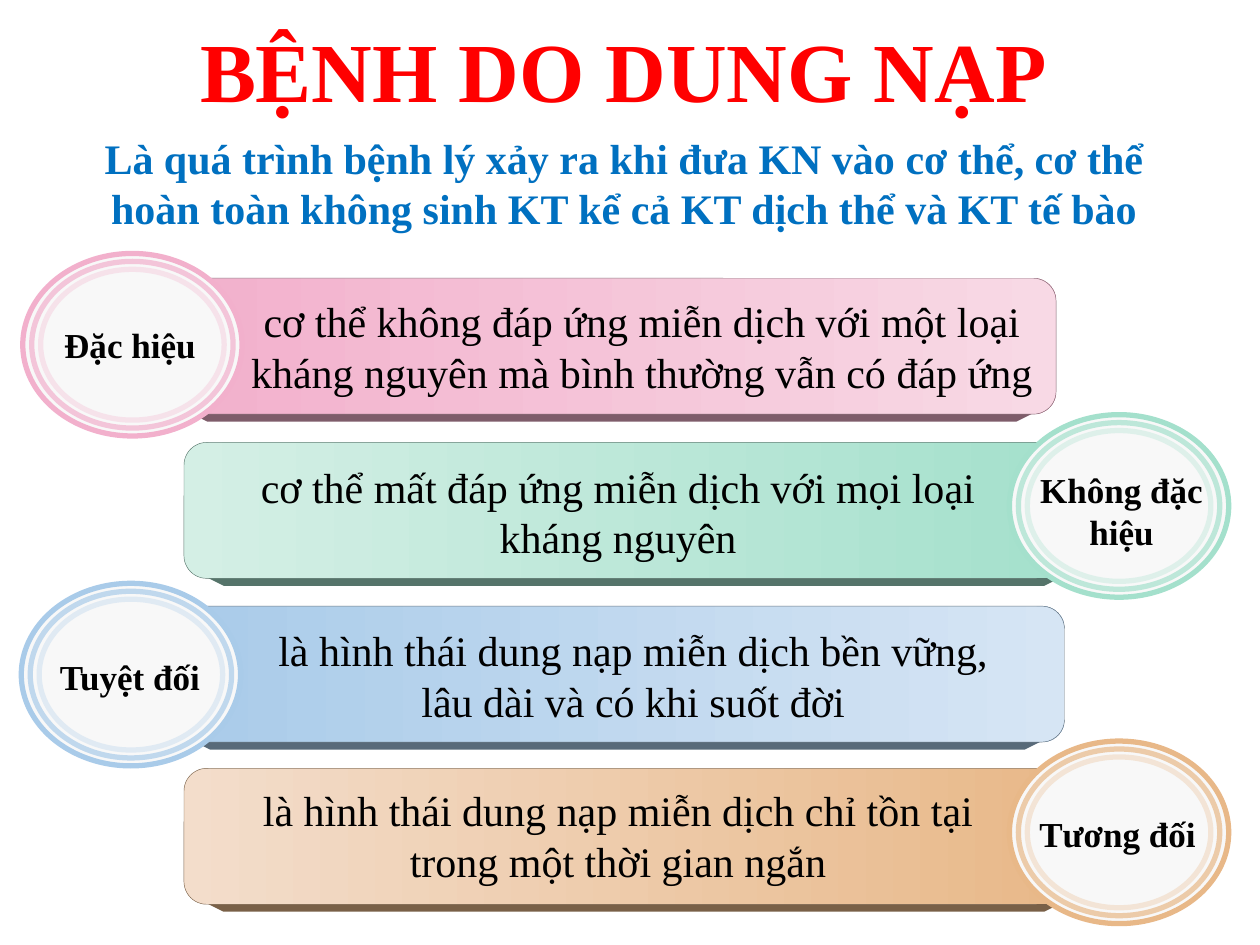
from dataclasses import dataclass

from lxml import etree
from pptx import Presentation
from pptx import util as u
from pptx.dml.color import RGBColor
from pptx.enum import shapes, text
from pptx.oxml.ns import qn

Cm, Pt = u.Cm, u.Pt
FONT = "Times New Roman"
HUES = {
    "red": "FF0000", "navy": "0070C0", "black": "000000", "white": "FFFFFF", "disc": "F8F8F8",
    "pink": "F2B0CC", "pink pale": "F8D9E5", "pink dark": "7E5C6A",
    "green": "A4E0CC", "green pale": "D4EFE5", "green dark": "55746A",
    "blue": "A9CBE9", "blue pale": "D6E5F4", "blue dark": "586A79",
    "tan": "E8B888", "tan pale": "F3DDCB", "tan dark": "796047",
}
BAR_H, DEPTH = 2.74, 0.15
RING_W, RING_H = 4.42, 3.68
STEP_X, STEP_Y = 0.18, 0.16


@dataclass
class Row:
    hue: str
    left: bool  # ring on the left side
    bar: tuple[float, float, float]  # left, top, width
    body: str
    note: tuple[float, float, float]
    ring: tuple[float, float]
    label: str
    tag: tuple[float, float]


ROWS = [
    Row("pink", True, (3.38, 5.61, 17.91),
        "cơ thể không đáp ứng miễn dịch với một loại kháng nguyên mà bình thường vẫn có đáp ứng",
        (4.8, 5.84, 16.28), (0.46, 5.11), "Đặc hiệu", (0.69, 6.4)),
    Row("green", False, (3.71, 8.92, 18.14),
        "cơ thể mất đáp ứng miễn dịch với mọi loại kháng nguyên",
        (4.32, 9.17, 16.28), (20.35, 8.36), "Không đặc hiệu", (20.68, 9.32)),
    Row("blue", True, (3.43, 12.22, 18.03),
        "là hình thái dung nạp miễn dịch bền vững, lâu dài và có khi suốt đời",
        (4.8, 12.47, 15.93), (0.43, 11.76), "Tuyệt đối", (0.69, 13.08)),
    Row("tan", False, (3.71, 15.49, 18.14),
        "là hình thái dung nạp miễn dịch chỉ tồn tại trong một thời gian ngắn",
        (4.32, 15.7, 16.28), (20.35, 14.94), "Tương đối", (20.6, 16.26)),
]


def rgb(name: str) -> RGBColor:
    return RGBColor.from_string(HUES[name])


def fade(line, part: int) -> None:
    """Make a solid line show at the given percentage."""
    tint = line.fill._xPr.find(".//" + qn("a:srgbClr"))
    etree.SubElement(tint, qn("a:alpha")).set("val", str(part * 1000))


def write(frame, words: str, *, size: float, hue: str = "black", bold: bool = False,
          anchor=text.MSO_ANCHOR.TOP, lead=None) -> None:
    frame.word_wrap = True
    frame.auto_size = text.MSO_AUTO_SIZE.NONE
    frame.vertical_anchor = anchor
    par = frame.paragraphs[0]
    par.alignment = text.PP_ALIGN.CENTER
    if lead:
        par.line_spacing = Pt(lead)
    run = par.add_run()
    run.text = words
    font = run.font
    font.name, font.size, font.bold = FONT, Pt(size), bold
    font.color.rgb = rgb(hue)


def place(slide, words: str, x: float, y: float, w: float, h: float, **style) -> None:
    box = slide.shapes.add_textbox(Cm(x), Cm(y), Cm(w), Cm(h))
    write(box.text_frame, words, **style)


def edge(slide, y: float, part: int) -> None:
    """Draw a faint highlight along a bar."""
    link = slide.shapes.add_connector(
        shapes.MSO_CONNECTOR.STRAIGHT, Cm(4.2), Cm(y), Cm(20.9), Cm(y))
    link.line.color.rgb = rgb("white")
    link.line.width = Pt(0.25)
    fade(link.line, part)
    etree.SubElement(link._element.spPr, qn("a:effectLst"))


def draw_bar(slide, row: Row) -> None:
    x, y, w = row.bar
    end, base = x + w, y + BAR_H
    path = slide.shapes.build_freeform(Cm(x + 0.3), Cm(base - 0.1))
    path.add_line_segments([(Cm(end - 0.3), Cm(base - 0.1)), (Cm(end - 0.8), Cm(base + DEPTH)),
                            (Cm(x + 0.8), Cm(base + DEPTH))])
    side = path.convert_to_shape()
    side.shadow.inherit = False
    side.fill.solid()
    side.fill.fore_color.rgb = rgb(row.hue + " dark")
    side.line.fill.background()

    face = slide.shapes.add_shape(
        shapes.MSO_SHAPE.ROUNDED_RECTANGLE, Cm(x), Cm(y), Cm(w), Cm(BAR_H))
    face.shadow.inherit = False
    face.adjustments[0] = 0.167
    face.line.color.rgb = rgb(row.hue + " dark")
    face.line.width = Pt(0.25)
    face.fill.gradient()
    face.fill.gradient_angle = 0
    ends = [row.hue, row.hue + " pale"]
    for stop, hue in zip(face.fill.gradient_stops, ends if row.left else ends[::-1]):
        stop.color.rgb = rgb(hue)
    edge(slide, base, 15)
    edge(slide, y, 25)


def draw_ring(slide, row: Row) -> None:
    x, y = row.ring
    for i, part in enumerate((100, 70, 30)):
        dx, dy = i * STEP_X, i * STEP_Y
        oval = slide.shapes.add_shape(shapes.MSO_SHAPE.OVAL, Cm(x + dx), Cm(y + dy),
                                      Cm(RING_W - 2 * dx), Cm(RING_H - 2 * dy))
        oval.shadow.inherit = False
        if i:
            oval.fill.background()
        else:
            oval.fill.solid()
            oval.fill.fore_color.rgb = rgb("disc")
        oval.line.color.rgb = rgb(row.hue)
        oval.line.width = Pt(3)
        if part < 100:
            fade(oval.line, part)


def main() -> None:
    deck = Presentation()
    deck.slide_width, deck.slide_height = Cm(25.4), Cm(19.05)
    slide = deck.slides.add_slide(deck.slide_layouts[5])
    title = slide.shapes.title
    title.left, title.top, title.width, title.height = Cm(1.14), Cm(0.64), Cm(22.86), Cm(1.9)
    write(title.text_frame, "BỆNH DO DUNG NẠP", size=48, hue="red", bold=True,
          anchor=text.MSO_ANCHOR.BOTTOM, lead=58)
    place(slide, "Là quá trình bệnh lý xảy ra khi đưa KN vào cơ thể, cơ thể hoàn toàn "
          "không sinh KT kể cả KT dịch thể và KT tế bào",
          1.57, 2.54, 22.02, 2.57, size=24, hue="navy", bold=True)
    for row in ROWS:
        draw_bar(slide, row)
    for row in ROWS:
        place(slide, row.body, *row.note, 2.31, size=24)
        draw_ring(slide, row)
        place(slide, row.label, *row.tag, 3.86, 1.96, size=20, bold=True)
    deck.save("out.pptx")


if __name__ == "__main__":
    main()
